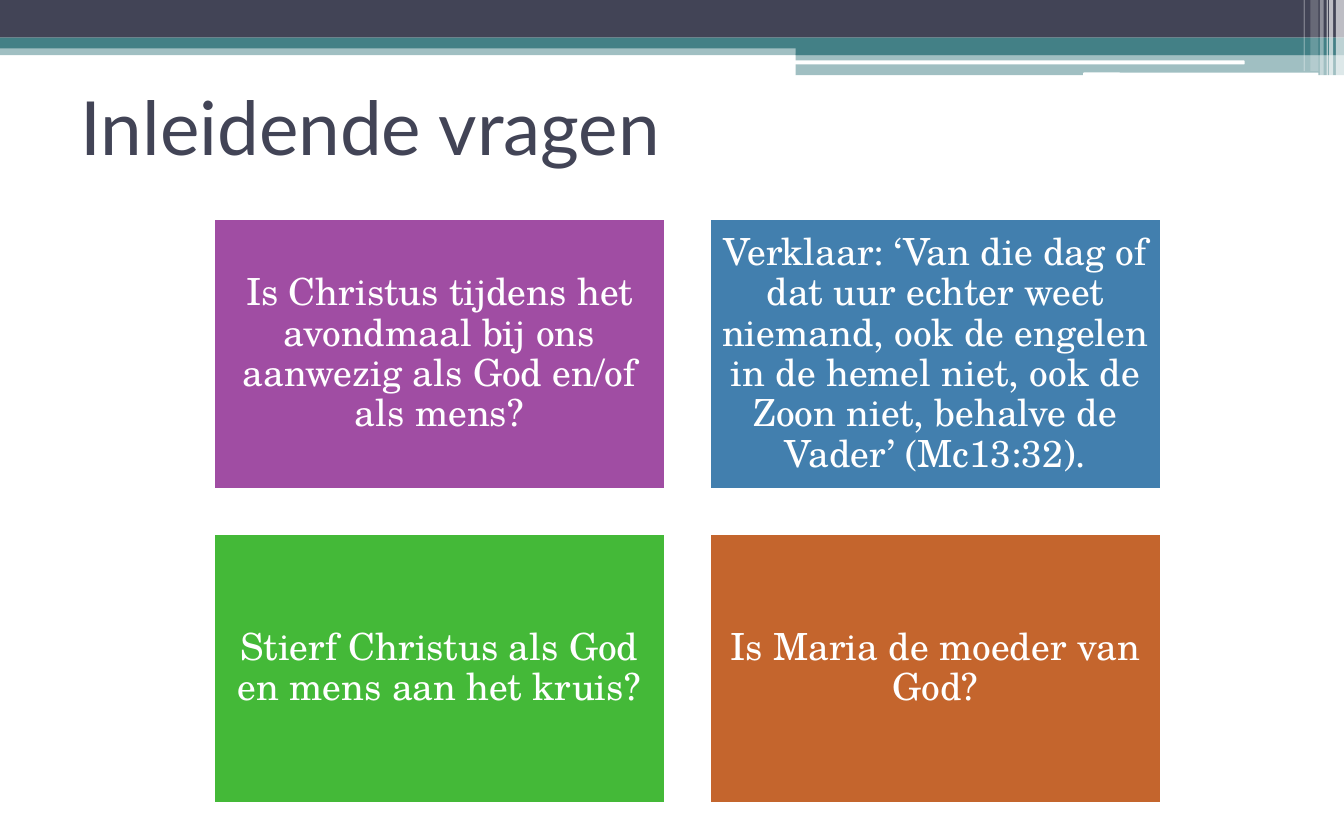
from lxml import etree
from pptx import Presentation, util as u
from pptx.dml.color import RGBColor
from pptx.enum import shapes, text
from pptx.oxml.ns import qn

WHITE = RGBColor(0xFF, 0xFF, 0xFF)
SLATE = RGBColor(0x42, 0x44, 0x56)
TEAL = RGBColor(0x43, 0x80, 0x86)
PURPLE = RGBColor(0xA0, 0x4D, 0xA3)
BLUE = RGBColor(0x42, 0x7F, 0xAE)
GREEN = RGBColor(0x44, 0xB9, 0x38)
RUST = RGBColor(0xC4, 0x65, 0x2D)

WIDE, HIGH = 10, 6.25
HALF = 5.92                     # left edge of the right-hand bands
LEFT, TOP = 1.59, 1.63          # start of the card grid
CARD_W, CARD_H, GAP = 3.36, 2.01, 0.33
COLS = 2

# left, top, width, height, colour, opacity in percent
BANDS = [
    (0, 0.33, WIDE, 0.08, TEAL, 50),
    (0, 0, WIDE, 0.28, SLATE, 100),
    (0, 0.28, WIDE, 0.08, TEAL, 100),
    (HALF, 0.33, WIDE - HALF, 0.08, TEAL, 100),
    (HALF, 0.4, WIDE - HALF, 0.16, TEAL, 50),
]
# left, top, width
LINES = [(5.91, 0.45, 3.35), (8.06, 0.54, 1.75)]
# left, width, height, opacity in percent
STRIPES = [
    (9.94, 0.06, 0.57, 65),
    (9.89, 0.03, 0.57, 65),
    (9.87, 0.01, 0.57, 60),
    (9.82, 0.03, 0.57, 40),
    (9.75, 0.06, 0.53, 20),
    (9.7, 0.01, 0.53, 30),
]
CARDS = [
    ("Is Christus tijdens het avondmaal bij ons aanwezig als God en/of "
     "als mens?", PURPLE),
    ("Verklaar: ‘Van die dag of dat uur echter weet niemand, ook de engelen "
     "in de hemel niet, ook de Zoon niet, behalve de Vader’ (Mc13:32).", BLUE),
    ("Stierf Christus als God en mens aan het kruis?", GREEN),
    ("Is Maria de moeder van God?", RUST),
]


def add_box(slide, left, top, width, height, color, alpha=100,
            kind=shapes.MSO_SHAPE.RECTANGLE):
    """Add a flat shape without outline; alpha is its opacity in percent."""
    box = slide.shapes.add_shape(
        kind, *(u.Inches(n) for n in (left, top, width, height)))
    box.shadow.inherit = False
    box.fill.solid()
    box.fill.fore_color.rgb = color
    box.line.fill.background()
    if alpha < 100:
        tone = box.fill._xPr.find(".//" + qn("a:srgbClr"))
        etree.SubElement(tone, qn("a:alpha"), val=str(alpha * 1000))
    return box


def add_run(para, words, font, size, color):
    run = para.add_run()
    run.text = words
    run.font.name = font
    run.font.size = u.Pt(size)
    run.font.color.rgb = color


def add_header(slide):
    for band in BANDS:
        add_box(slide, *band)
    for left, top, width in LINES:
        add_box(slide, left, top, width, 0.03, WHITE,
                kind=shapes.MSO_SHAPE.ROUNDED_RECTANGLE)
    for left, width, height, alpha in STRIPES:
        add_box(slide, left, 0, width, height, WHITE, alpha)


def add_card(slide, index, words, color):
    row, col = divmod(index, COLS)
    card = add_box(slide, LEFT + col * (CARD_W + GAP),
                   TOP + row * (CARD_H + GAP), CARD_W, CARD_H, color)
    card.line.color.rgb = WHITE
    card.line.width = u.Pt(1.5)
    frame = card.text_frame
    frame.word_wrap = True
    frame.vertical_anchor = text.MSO_ANCHOR.MIDDLE
    frame.margin_left = frame.margin_right = u.Inches(0.08)
    frame.margin_top = frame.margin_bottom = u.Inches(0.08)
    para = frame.paragraphs[0]
    para.alignment = text.PP_ALIGN.CENTER
    para.line_spacing = 0.9
    add_run(para, words, "TeX Gyre Schola", 20, WHITE)


def set_title(slide, words):
    title = slide.shapes.title
    title.left, title.top = u.Inches(0.5), u.Inches(0.45)
    title.width, title.height = u.Inches(9), u.Inches(0.97)
    title.text_frame.vertical_anchor = text.MSO_ANCHOR.MIDDLE
    para = title.text_frame.paragraphs[0]
    para.alignment = text.PP_ALIGN.LEFT
    add_run(para, words, "Lato", 40, SLATE)


def main():
    deck = Presentation()
    deck.slide_width, deck.slide_height = u.Inches(WIDE), u.Inches(HIGH)
    slide = deck.slides.add_slide(deck.slide_layouts.get_by_name("Title Only"))
    add_header(slide)
    for index, (words, color) in enumerate(CARDS):
        add_card(slide, index, words, color)
    set_title(slide, "Inleidende vragen")
    deck.save("out.pptx")


if __name__ == "__main__":
    main()
